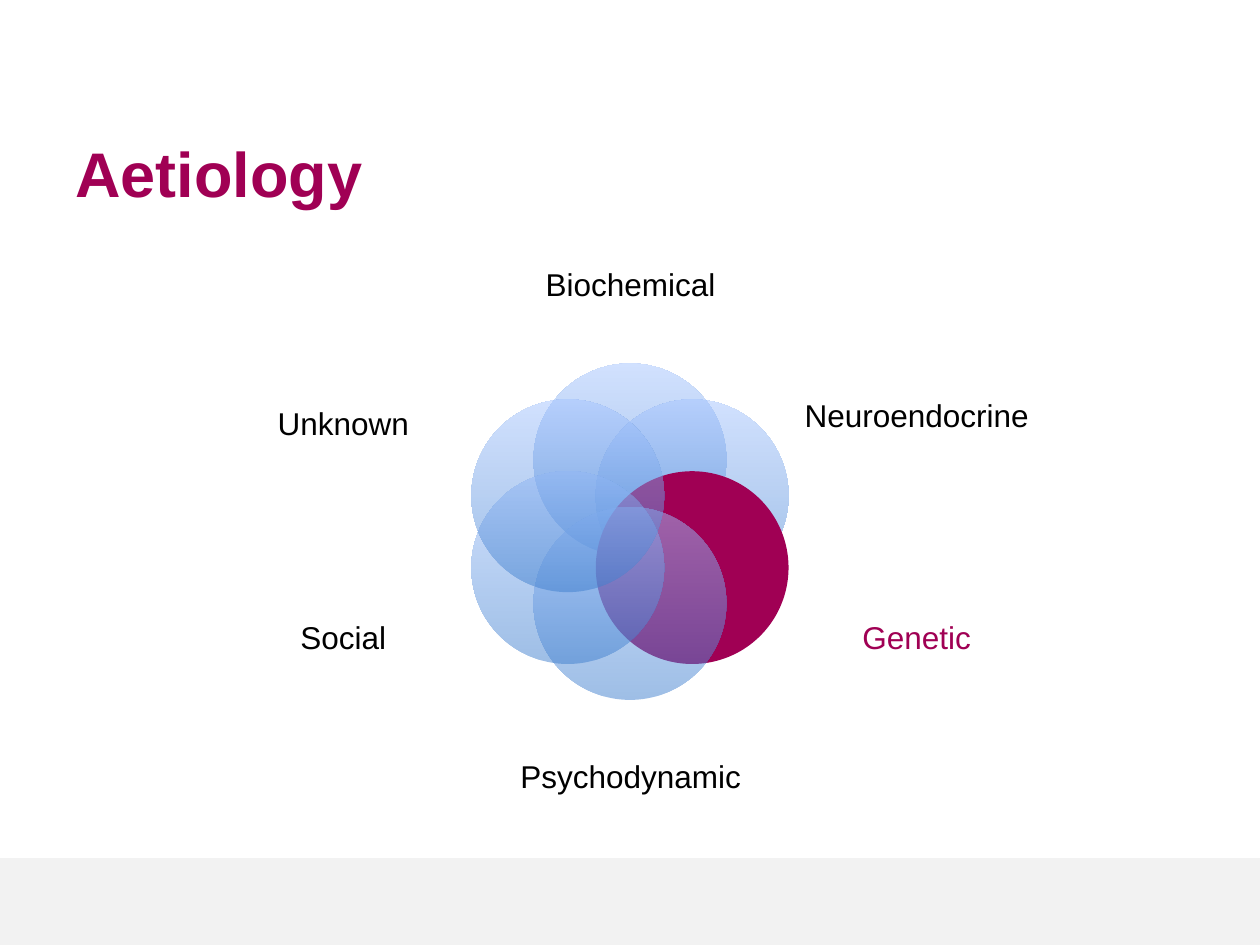
from math import cos, radians, sin

from lxml.etree import SubElement
from pptx import Presentation
from pptx.dml.color import RGBColor
from pptx.enum.shapes import MSO_SHAPE as Form
from pptx.enum.text import MSO_ANCHOR as Anchor, PP_ALIGN as Align
from pptx.oxml.ns import qn
from pptx.util import Inches, Pt

TITLE = "Aetiology"
ACCENT, BLACK, GREY = "A00054", "000000", "F2F2F2"
SHADES = ["3F7FCE", "A4C4FF"]

# Clockwise from the top: label, label box (left, top, width, height)
CAUSES = [
    ("Biochemical", (4.05, 1.75, 1.91, 1.04)),
    ("Neuroendocrine", (6.37, 2.74, 1.81, 1.14)),
    ("Genetic", (6.37, 4.44, 1.81, 1.27)),
    ("Psychodynamic", (4.05, 5.66, 1.91, 1.04)),
    ("Social", (1.82, 4.44, 1.81, 1.27)),
    ("Unknown", (1.82, 2.74, 1.81, 1.27)),
]
FOCUS = "Genetic"
MID_X, MID_Y, RING, SIZE = 5, 4.22, 0.57, 1.53


def tint(hue):
    return RGBColor.from_string(hue)


def put_shape(form, box, hue=None):
    """Add a borderless shape, solid in hue or with the half-clear blend."""
    shape = slide.shapes.add_shape(form, *map(Inches, box))
    shape.shadow.inherit = False
    shape.line.fill.background()
    if hue:
        shape.fill.solid()
        shape.fill.fore_color.rgb = tint(hue)
        return
    shape.fill.gradient()
    shape.fill.gradient_angle = 90
    for stop, shade in zip(shape.fill.gradient_stops, SHADES):
        stop.color.rgb = tint(shade)
    for node in shape.element.spPr.iter(qn("a:srgbClr")):
        SubElement(node, qn("a:alpha"), val="50000")


def put_text(words, box, hue, frame_set, para_set, font_set):
    frame = slide.shapes.add_textbox(*map(Inches, box)).text_frame
    para = frame.paragraphs[0]
    para.text = words
    font = para.runs[0].font
    font.color.rgb = tint(hue)
    for target, values in (
        (frame, {"word_wrap": True, **frame_set}),
        (para, para_set),
        (font, {"name": "Arial", **font_set}),
    ):
        for key, value in values.items():
            setattr(target, key, value)


LABEL = (
    {"vertical_anchor": Anchor.MIDDLE, "margin_left": 0, "margin_right": 0,
     "margin_top": 0, "margin_bottom": 0},
    {"alignment": Align.CENTER, "line_spacing": 0.9},
    {"size": Pt(18)},
)
HEAD = ({"margin_top": Inches(0.1)}, {}, {"size": Pt(36), "bold": True})

deck = Presentation()
deck.slide_width, deck.slide_height = Inches(10), Inches(7.5)
slide = deck.slides.add_slide(deck.slide_layouts[6])

put_shape(Form.RECTANGLE, (0, 6.81, 10, 0.69), GREY)
put_text(TITLE, (0.5, 0.97, 9, 0.58), ACCENT, *HEAD)

for i, (name, box) in enumerate(CAUSES):
    turn = radians(i * 360 / len(CAUSES))
    left = MID_X + RING * sin(turn) - SIZE / 2
    top = MID_Y - RING * cos(turn) - SIZE / 2
    hue = ACCENT if name == FOCUS else None
    put_shape(Form.OVAL, (left, top, SIZE, SIZE), hue)
    put_text(name, box, hue or BLACK, *LABEL)

deck.save("out.pptx")
